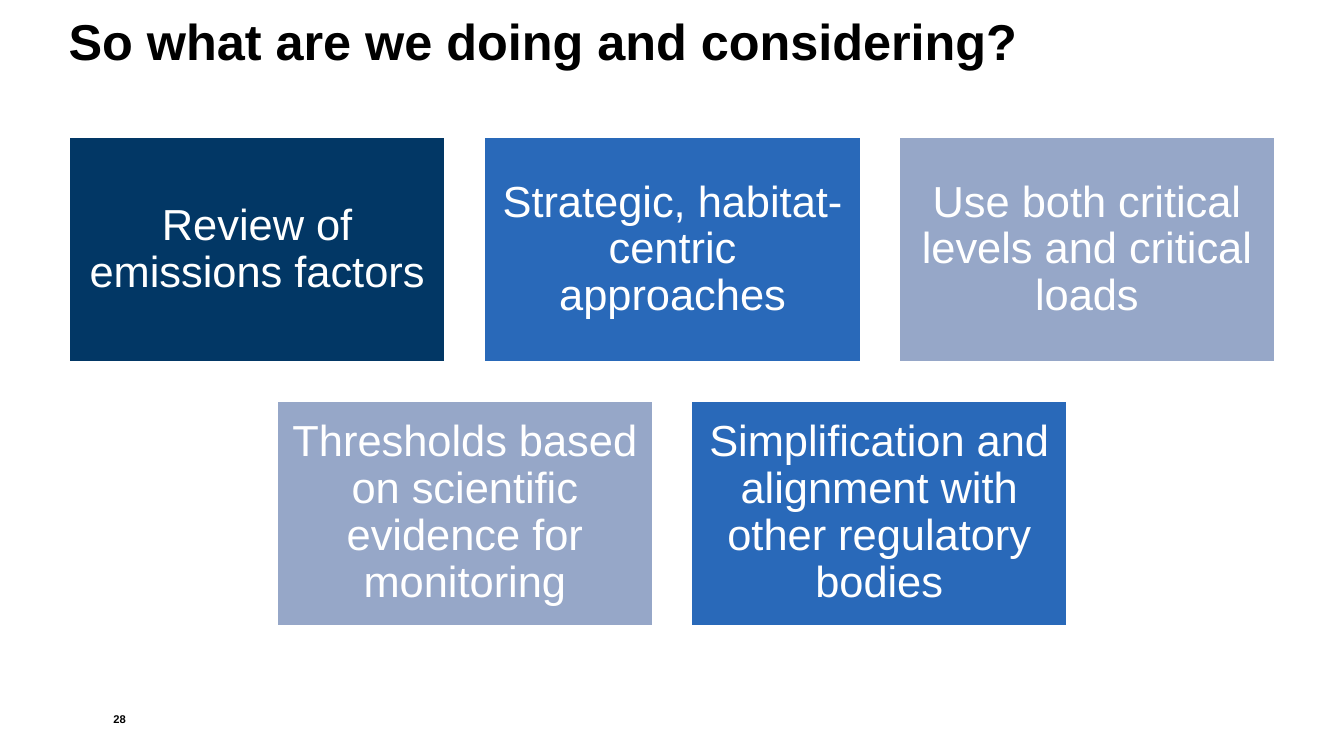
from pptx import Presentation
from pptx.dml.color import RGBColor
from pptx.enum.shapes import MSO_SHAPE
from pptx.enum.text import MSO_ANCHOR, MSO_AUTO_SIZE, PP_ALIGN
from pptx.util import Emu, Pt

INK = {"navy": "023765", "blue": "2969B9", "mist": "96A7C8",
       "white": "FFFFFF", "black": "000000"}
LEFT, WIDE, HIGH = 68, 374, 224
STEP, DROP = 411.5, 261
ROWS = [
    [("Review of emissions factors", "navy"),
     ("Strategic, habitat-centric approaches", "blue"),
     ("Use both critical levels and critical loads", "mist")],
    [("Thresholds based on scientific evidence for monitoring", "mist"),
     ("Simplification and alignment with other regulatory bodies", "blue")],
]


class Deck:
    """Hold the style and the current slide."""

    def __init__(self):
        """Start a deck with one titled slide."""
        self.deck = Presentation()
        self.deck.slide_width = self.px(1333)
        self.deck.slide_height = self.px(750)
        self.page = self.deck.slides.add_slide(self.deck.slide_layouts[5])

    def px(self, size):
        """Turn px into EMU at 100 px to the inch."""
        return Emu(size * 9144)

    def ink(self, name):
        """Return a named colour."""
        return RGBColor.from_string(INK[name])

    def label(self, shape, text, size, color, align, anchor, inset=0,
              bold=False, lead=0.9):
        """Set and style the text of a shape."""
        frame = shape.text_frame
        frame.text = text
        frame.word_wrap = True
        frame.auto_size = MSO_AUTO_SIZE.NONE
        frame.vertical_anchor = anchor
        frame.margin_left = frame.margin_right = self.px(inset)
        frame.margin_top = frame.margin_bottom = self.px(inset)
        para = frame.paragraphs[0]
        para.alignment = align
        para.line_spacing = lead
        font = para.font
        font.name, font.size, font.bold = "Arial", Pt(size), bold
        font.color.rgb = self.ink(color)

    def title(self, text, x, y, w, h):
        """Place the slide title."""
        shape = self.page.shapes.title
        shape.left, shape.top = self.px(x), self.px(y)
        shape.width, shape.height = self.px(w), self.px(h)
        self.label(shape, text, 36, "black", PP_ALIGN.LEFT, MSO_ANCHOR.TOP,
                   bold=True)

    def card(self, text, color, x, y, w, h):
        """Add a filled box with centred text."""
        shape = self.page.shapes.add_shape(
            MSO_SHAPE.RECTANGLE, *map(self.px, (x, y, w, h)))
        shape.shadow.inherit = False
        shape.fill.solid()
        shape.fill.fore_color.rgb = self.ink(color)
        shape.line.color.rgb = self.ink("white")
        shape.line.width = Pt(2)
        self.label(shape, text, 31, "white", PP_ALIGN.CENTER,
                   MSO_ANCHOR.MIDDLE, inset=13)

    def number(self, text, x, y, w, h):
        """Add the page number."""
        box = self.page.shapes.add_textbox(*map(self.px, (x, y, w, h)))
        self.label(box, text, 8, "black", PP_ALIGN.RIGHT, MSO_ANCHOR.BOTTOM,
                   bold=True, lead=0.95)


def main():
    """Build and save the slide."""
    deck = Deck()
    deck.title("So what are we doing and considering?", LEFT, 17, 1197, 66)
    for row, cards in enumerate(ROWS):
        start = LEFT + (len(ROWS[0]) - len(cards)) * STEP / 2
        for col, (text, color) in enumerate(cards):
            deck.card(text, color, round(start + col * STEP),
                      136 + row * DROP, WIDE, HIGH)
    deck.number("28", LEFT, 678, 57, 42)
    deck.deck.save("out.pptx")


if __name__ == "__main__":
    main()
